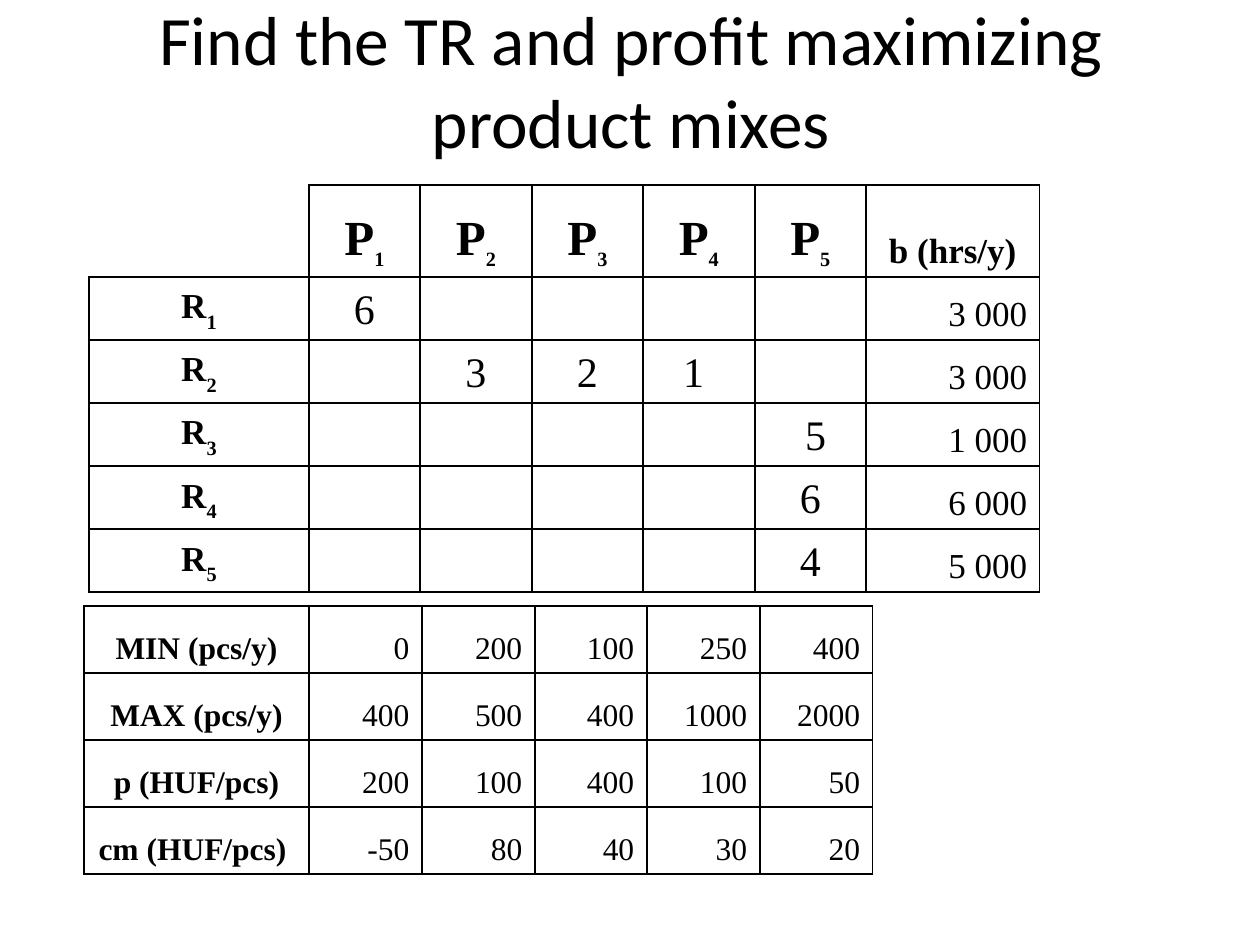
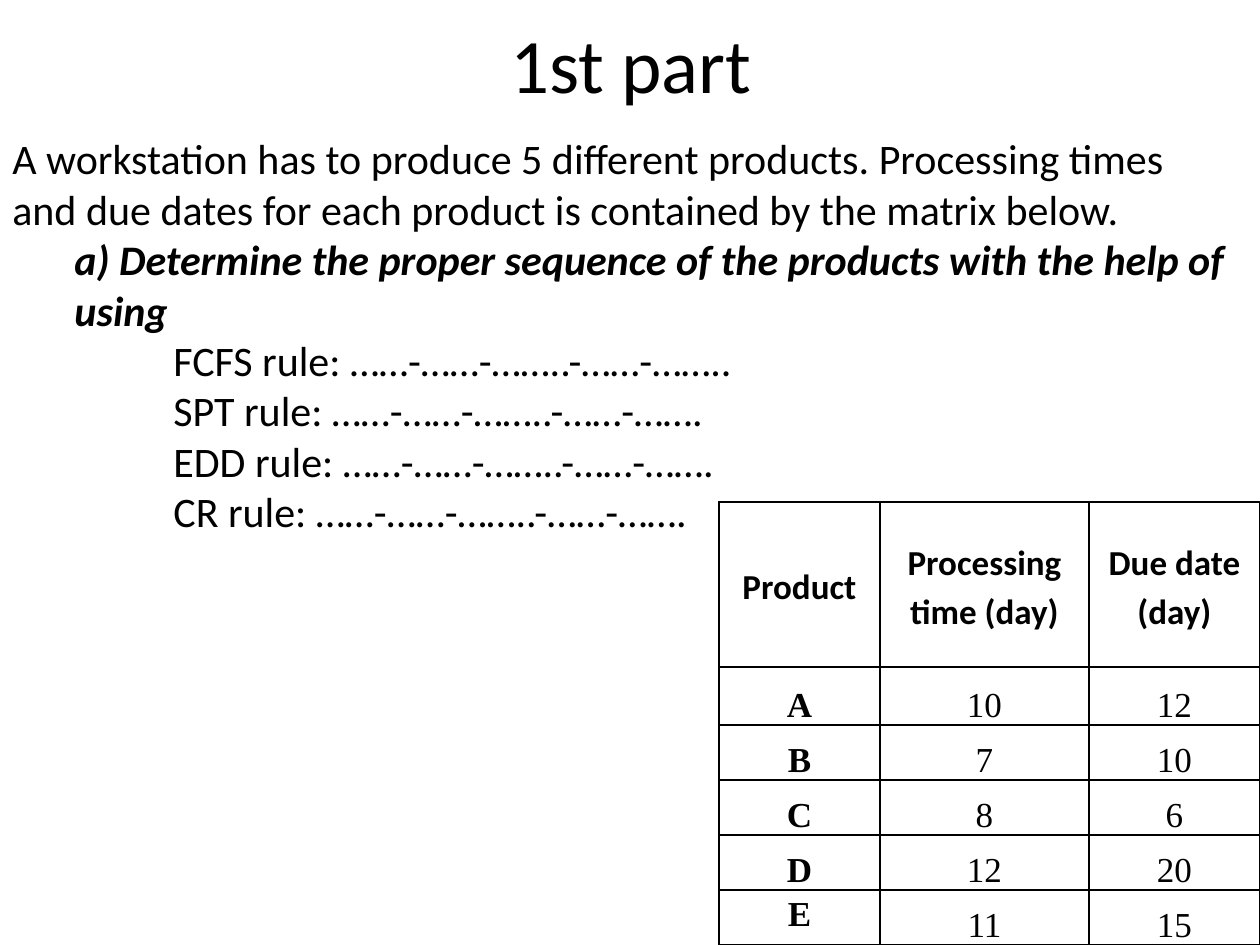
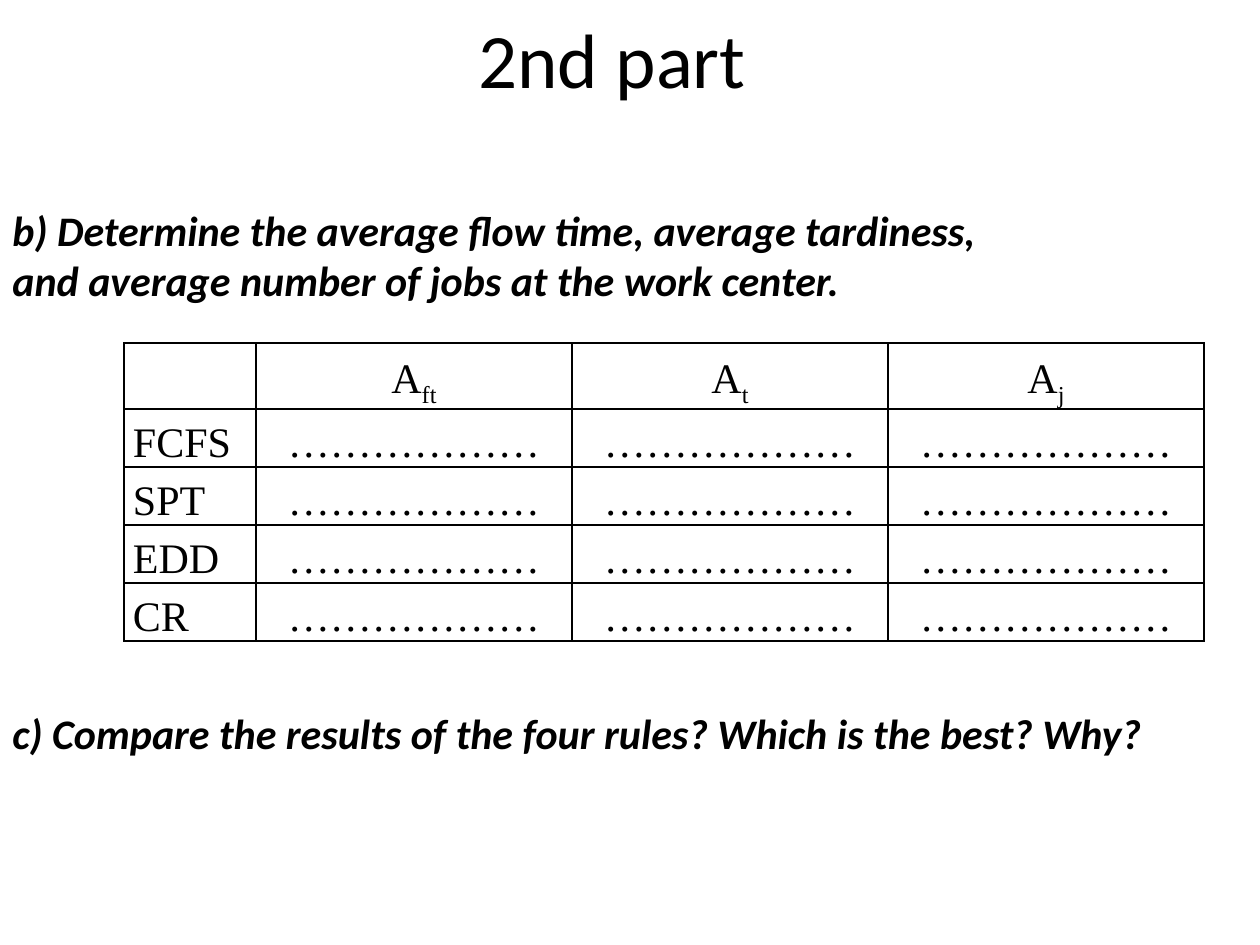
from lxml.etree import SubElement
from pptx import Presentation
from pptx.dml.color import RGBColor
from pptx.enum.text import MSO_ANCHOR, PP_ALIGN
from pptx.oxml.ns import qn
from pptx.util import Emu, Pt

BLACK = RGBColor(0x00, 0x00, 0x00)
SANS, SERIF = "Calibri", "Times New Roman"
LEFT, MID, RIGHT = PP_ALIGN.LEFT, PP_ALIGN.CENTER, PP_ALIGN.RIGHT

# Content; "_" starts a subscript
TITLES = [
    ("Find the TR and profit maximizing product mixes", 39.6, (64, 0, 1134, 158)),
    ("1st part", 44, (64, 0, 1134, 125)),
    ("2nd part ", 44, (54, 0, 1134, 116)),
]
HOURS = [
    ["", "P_1", "P_2", "P_3", "P_4", "P_5", "b (hrs/y)"],
    ["R_1", "6", "", "", "", "", "3 000"],
    ["R_2", "", "3", "2", "1 ", "", "3 000"],
    ["R_3", "", "", "", "", " 5", "1 000"],
    ["R_4", "", "", "", "", "6", "6 000"],
    ["R_5", "", "", "", "", "4", "5 000"],
]
LIMITS = [
    ["MIN (pcs/y)", "0", "200", "100", "250", "400", ""],
    ["MAX (pcs/y)", "400", "500", "400", "1000", "2000", ""],
    ["p (HUF/pcs)", "200", "100", "400", "100", "50", ""],
    ["cm (HUF/pcs) ", "-50", "80", "40", "30", "20", ""],
]
JOBS = [
    ["Product", "Processing time (day)", "Due date (day)"],
    ["A", "10", "12"],
    ["B", "7", "10"],
    ["C", "8", "6"],
    ["D", "12", "20"],
    ["E", "11", "15"],
]
RULES = ["FCFS", "SPT", "EDD", "CR"]
SCORES = [["", "A_ft", "A_t", "A_j"]] + [[rule] + ["………………"] * 3 for rule in RULES]

# Text, left margin in px, bold italic, space before in points
TASK = [
    ("A workstation has to produce 5 different products. Processing times \v"
     "and due dates for each product is contained by the matrix below.", 0, False, 0),
    ("a) Determine the proper sequence of the products with the help of using", 62, True, 0),
    ("FCFS rule: ……-……-……..-……-……..", 161, False, 0),
] + [(f"{rule} rule: ……-……-……..-……-…….", 161, False, 0) for rule in RULES[1:]]
ASKS = [
    ("b) Determine the average flow time, average tardiness, \v"
     "and average number of jobs at the work center.", 0, True, 0),
    ("c) Compare the results of the four rules? Which is the best? Why?", 0, True, 230),
]


def px(n):
    return Emu(round(n * 914400 / 126))


def set_font(font, name, size, bold=False, slant=False):
    font.name, font.size, font.bold, font.italic = name, Pt(size), bold, slant
    font.color.rgb = BLACK


def add_box(slide, box):
    frame = slide.shapes.add_textbox(*map(px, box)).text_frame
    frame.word_wrap = True
    frame.vertical_anchor = MSO_ANCHOR.MIDDLE
    return frame


def add_title(slide, text, size, box):
    para = add_box(slide, box).paragraphs[0]
    para.text, para.alignment = text, MID
    set_font(para.font, SANS, size)


def add_body(slide, box, lines):
    frame = add_box(slide, box)
    for i, (text, indent, strong, gap) in enumerate(lines):
        para = frame.add_paragraph() if i else frame.paragraphs[0]
        para.text, para.space_before = text, Pt(gap)
        para._p.get_or_add_pPr().set("marL", str(px(indent)))
        set_font(para.font, SANS, 24, strong, strong)


def set_edges(cell, sides):
    props = cell._tc.get_or_add_tcPr()
    for i, side in enumerate("LRTB"):
        line = SubElement(props, qn(f"a:ln{side}"), w=str(Pt(1)))
        if side in sides:
            fill = SubElement(line, qn("a:solidFill"))
            SubElement(fill, qn("a:srgbClr"), val=str(BLACK))
        else:
            SubElement(line, qn("a:noFill"))
        props.insert(i, line)


def fill_cell(cell, text, name=SERIF, size=20, bold=False, align=MID,
              sub=None, drop=-30, lead=1, after=0):
    para = cell.text_frame.paragraphs[0]
    para.alignment, para.line_spacing, para.space_after = align, lead, Pt(after)
    for i, part in enumerate(text.split("_")):
        run = para.add_run()
        run.text = part
        set_font(run.font, name, sub if i and sub else size, bold)
        if i:
            run._r.get_or_add_rPr().set("baseline", str(drop * 1000))


def add_grid(slide, spot, cols, rows, data, style, edges=None, pad=None):
    """style(row, col) gives text options; edges maps cells to their drawn sides."""
    size = sum(cols), sum(rows)
    grid = slide.shapes.add_table(len(rows), len(cols), *map(px, spot + size)).table
    grid.first_row = grid.horz_banding = False
    for col, width in zip(grid.columns, cols):
        col.width = px(width)
    for r, height in enumerate(rows):
        grid.rows[r].height = px(height)
        for c, text in enumerate(data[r]):
            cell = grid.cell(r, c)
            cell.fill.background()
            cell.vertical_anchor = MSO_ANCHOR.BOTTOM
            if pad is not None:
                cell.margin_left = cell.margin_right = px(pad)
                cell.margin_top = cell.margin_bottom = 0
            if text:
                fill_cell(cell, text, **style(r, c))
            set_edges(cell, (edges or {}).get((r, c), "LRTB"))
    return grid


# Text options by cell
def hours_style(r, c):
    if r == 0:
        return dict(size=28 if c < 6 else 20, sub=20, bold=True)
    if c == 0:
        return dict(bold=True)
    return dict(align=RIGHT) if c == 6 else dict(size=24)


def limit_style(r, c):
    return dict(size=18, bold=c == 0, align=RIGHT if c else MID)


def job_style(r, c):
    if r == 0:
        return dict(name=SANS, bold=True, lead=1.15, after=10)
    return dict(bold=c == 0, lead=1.15)


def score_style(r, c):
    return dict(size=24, align=MID if c else LEFT, drop=-25, lead=1.15)


def main():
    deck = Presentation()
    deck.slide_width, deck.slide_height = px(1260), px(945)
    slides = []
    for title in TITLES:
        slide = deck.slides.add_slide(deck.slide_layouts[6])
        add_title(slide, *title)
        slides.append(slide)
    mix, first, second = slides

    # Product mix
    add_grid(mix, (89, 185), [220] + [111, 112, 111, 112, 111] + [174],
             [92] + [59] * 5, HOURS, hours_style, {(0, 0): "RB"})
    add_grid(mix, (84, 606), [225] + [113, 113, 112, 113, 113] + [175],
             [67] * 4, LIMITS, limit_style, {(r, 6): "L" for r in range(4)})

    # Job sequence
    jobs = add_grid(first, (719, 502), [161, 209, 171], [165, 58] + [55] * 4,
                    JOBS, job_style, pad=6)
    for c in range(3):
        jobs.cell(0, c).vertical_anchor = MSO_ANCHOR.MIDDLE
    jobs.cell(5, 0).vertical_anchor = MSO_ANCHOR.TOP
    add_body(first, (0, 125, 1260, 419), TASK)

    # Rule comparison
    add_grid(second, (124, 343), [132] + [316] * 3, [61] + [53] * 4,
             SCORES, score_style, pad=9)
    add_body(second, (0, 195, 1164, 572), ASKS)

    deck.save("out.pptx")


if __name__ == "__main__":
    main()
